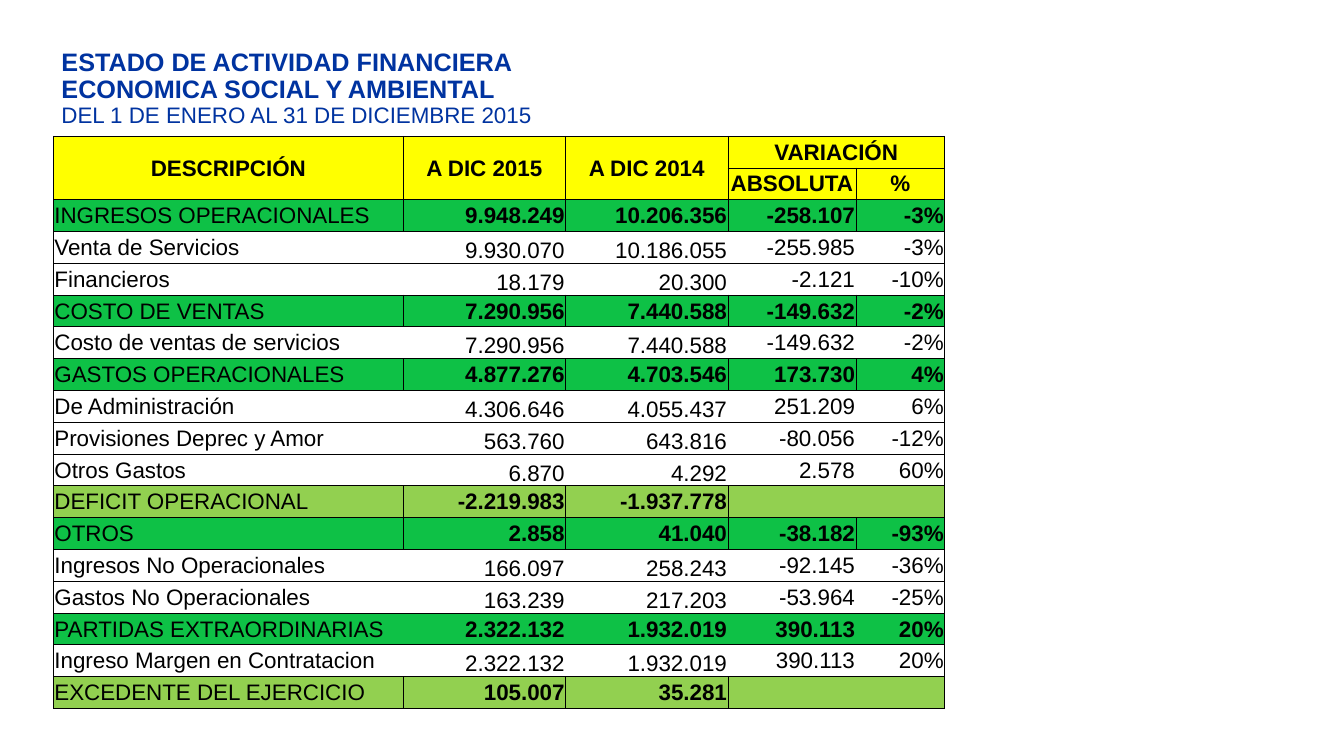
from dataclasses import dataclass

from lxml import etree
from pptx import Presentation
from pptx.dml.color import RGBColor
from pptx.enum.text import MSO_ANCHOR, MSO_AUTO_SIZE, PP_ALIGN
from pptx.oxml.ns import qn
from pptx.util import Inches, Pt

LEFT, CENTER, RIGHT = PP_ALIGN.LEFT, PP_ALIGN.CENTER, PP_ALIGN.RIGHT
TOP, MIDDLE, BOTTOM = MSO_ANCHOR.TOP, MSO_ANCHOR.MIDDLE, MSO_ANCHOR.BOTTOM
NO_AUTOFIT = MSO_AUTO_SIZE.NONE
TITLE_ONLY_LAYOUT = 5
PLAIN_TABLE_STYLE = "{2D5ABB26-0587-4C30-8999-92F81FD0307C}"


@dataclass(frozen=True)
class Theme:
    font: str = "Arial"
    title_color: str = "0033A0"
    text_color: str = "000000"
    border_color: str = "000000"
    header_fill: str = "FFFF00"
    group_fill: str = "0EC146"
    result_fill: str = "92D050"
    title_size: int = 18
    body_size: int = 16
    border_width: float = 0.5


THEME = Theme()

TITLE = "ESTADO DE ACTIVIDAD FINANCIERA ECONOMICA SOCIAL Y AMBIENTAL "
PERIOD = "DEL 1 DE ENERO AL 31 DE DICIEMBRE 2015"
COLUMN_WIDTHS = (3.47, 1.61, 1.61, 1.27, 0.88)
TABLE_HEIGHT = 5.68

STATEMENT = [
    ("header", "DESCRIPCIÓN", "A DIC 2015", "A DIC 2014", "VARIACIÓN", ""),
    ("header", "", "", "", "ABSOLUTA", "%"),
    ("group", "INGRESOS OPERACIONALES", "9.948.249", "10.206.356", "-258.107", "-3%"),
    ("detail", "Venta de Servicios", "9.930.070", "10.186.055", "-255.985", "-3%"),
    ("detail", "Financieros", "18.179", "20.300", "-2.121", "-10%"),
    ("group", "COSTO DE VENTAS", "7.290.956", "7.440.588", "-149.632", "-2%"),
    ("detail", "Costo de ventas de servicios", "7.290.956", "7.440.588", "-149.632", "-2%"),
    ("group", "GASTOS OPERACIONALES", "4.877.276", "4.703.546", "173.730", "4%"),
    ("detail", "De Administración", "4.306.646", "4.055.437", "251.209", "6%"),
    ("detail", "Provisiones Deprec y Amor", "563.760", "643.816", "-80.056", "-12%"),
    ("detail", "Otros Gastos", "6.870", "4.292", "2.578", "60%"),
    ("result", "DEFICIT OPERACIONAL", "-2.219.983", "-1.937.778", "", ""),
    ("group", "OTROS", "2.858", "41.040", "-38.182", "-93%"),
    ("detail", "Ingresos No Operacionales", "166.097", "258.243", "-92.145", "-36%"),
    ("detail", "Gastos No Operacionales", "163.239", "217.203", "-53.964", "-25%"),
    ("open group", "PARTIDAS EXTRAORDINARIAS", "2.322.132", "1.932.019", "390.113", "20%"),
    ("detail", "Ingreso Margen en Contratacion", "2.322.132", "1.932.019", "390.113", "20%"),
    ("result", "EXCEDENTE DEL EJERCICIO", "105.007", "35.281", "", ""),
]

ROW_FILLS = {
    "header": THEME.header_fill,
    "group": THEME.group_fill,
    "open group": THEME.group_fill,
    "result": THEME.result_fill,
}


def format_run(run, size, color, bold):
    run.font.name = THEME.font
    run.font.size = Pt(size)
    run.font.bold = bold
    run.font.color.rgb = RGBColor.from_string(color)


def add_title(slide):
    title = slide.shapes.title
    title.left, title.top = Inches(0.51), Inches(0.44)
    title.width, title.height = Inches(5.19), Inches(0.76)
    text_frame = title.text_frame
    text_frame.text = TITLE + "\v" + PERIOD
    text_frame.word_wrap = True
    text_frame.auto_size = NO_AUTOFIT
    text_frame.vertical_anchor = TOP
    paragraph = text_frame.paragraphs[0]
    paragraph.alignment = LEFT
    paragraph.line_spacing = 0.9
    heading, period = paragraph.runs
    format_run(heading, THEME.title_size, THEME.title_color, True)
    format_run(period, THEME.body_size, THEME.title_color, False)


def border_sides(kind, column):
    is_open = kind in ("detail", "open group")
    sides = ["T", "B"]
    if not is_open or column == 0:
        sides.append("L")
    if not is_open or column == len(COLUMN_WIDTHS) - 1:
        sides.append("R")
    return sides


def set_borders(cell, sides):
    properties = cell._tc.get_or_add_tcPr()
    for side in "LRTB":
        if side in sides:
            line = etree.SubElement(properties, qn(f"a:ln{side}"))
            line.set("w", str(Pt(THEME.border_width)))
            fill = etree.SubElement(line, qn("a:solidFill"))
            etree.SubElement(fill, qn("a:srgbClr")).set("val", THEME.border_color)


def fill_cell(cell, kind, column, text):
    set_borders(cell, border_sides(kind, column))
    if kind in ROW_FILLS:
        cell.fill.solid()
        cell.fill.fore_color.rgb = RGBColor.from_string(ROW_FILLS[kind])
    else:
        cell.fill.background()
    cell.margin_left = cell.margin_right = cell.margin_top = Inches(0.01)
    cell.margin_bottom = 0
    cell.vertical_anchor = BOTTOM if kind == "detail" and column in (1, 2) else MIDDLE
    if not text:
        return
    cell.text_frame.text = text
    paragraph = cell.text_frame.paragraphs[0]
    if kind == "header":
        paragraph.alignment = CENTER
    else:
        paragraph.alignment = LEFT if column == 0 else RIGHT
    bold = kind == "header" or (kind != "detail" and column > 0)
    format_run(paragraph.runs[0], THEME.body_size, THEME.text_color, bold)


def merge_cells(table):
    for column in range(3):
        table.cell(0, column).merge(table.cell(1, column))
    table.cell(0, 3).merge(table.cell(0, 4))
    for row, (kind, *_) in enumerate(STATEMENT):
        if kind == "result":
            table.cell(row, 3).merge(table.cell(row, 4))


def add_statement_table(slide):
    frame = slide.shapes.add_table(
        len(STATEMENT), len(COLUMN_WIDTHS), Inches(0.53), Inches(1.35),
        Inches(sum(COLUMN_WIDTHS)), Inches(TABLE_HEIGHT),
    )
    table = frame.table
    table.first_row = False
    table.horz_banding = False
    table._tbl.tblPr.find(qn("a:tableStyleId")).text = PLAIN_TABLE_STYLE
    for column, width in zip(table.columns, COLUMN_WIDTHS):
        column.width = Inches(width)
    for row in table.rows:
        row.height = Inches(TABLE_HEIGHT / len(STATEMENT))
    for row, (kind, *texts) in enumerate(STATEMENT):
        for column, text in enumerate(texts):
            fill_cell(table.cell(row, column), kind, column, text)
    merge_cells(table)


def main():
    presentation = Presentation()
    presentation.slide_width = Inches(13.33)
    presentation.slide_height = Inches(7.5)
    slide = presentation.slides.add_slide(presentation.slide_layouts[TITLE_ONLY_LAYOUT])
    add_title(slide)
    add_statement_table(slide)
    presentation.save("out.pptx")


if __name__ == "__main__":
    main()
